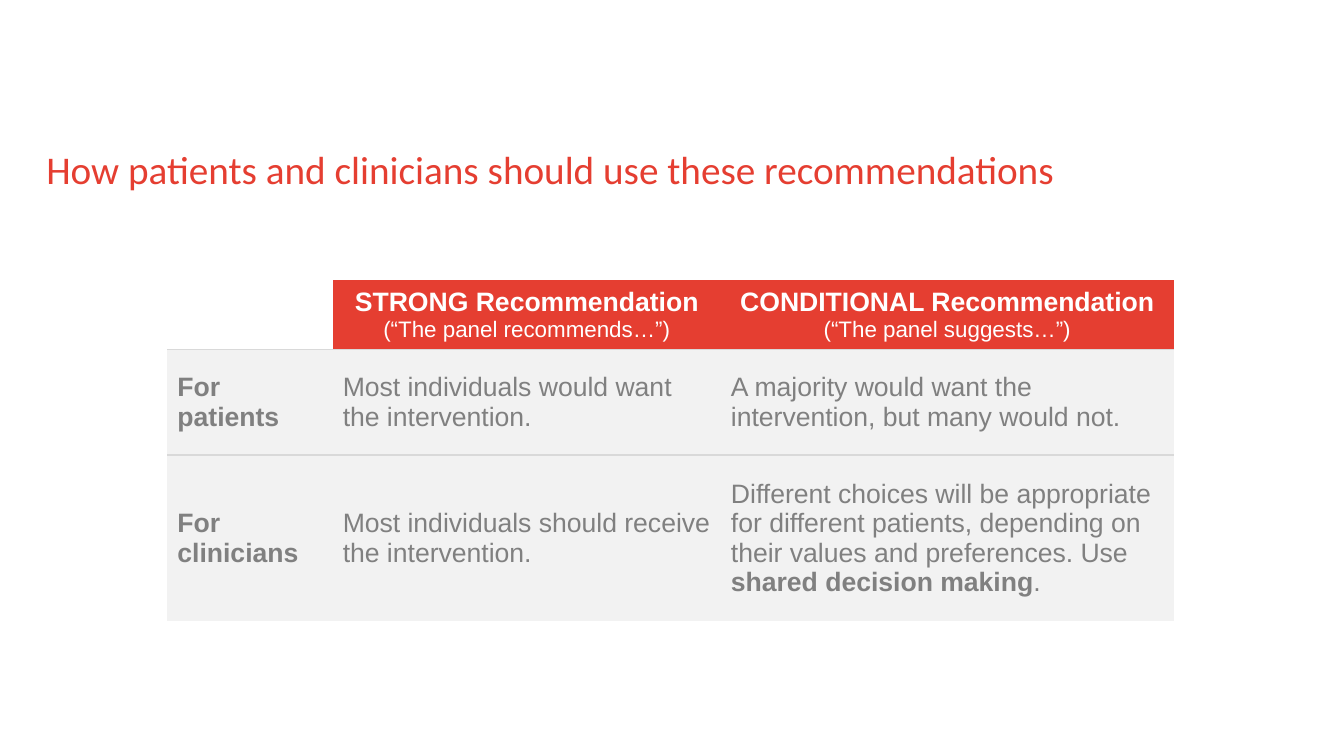
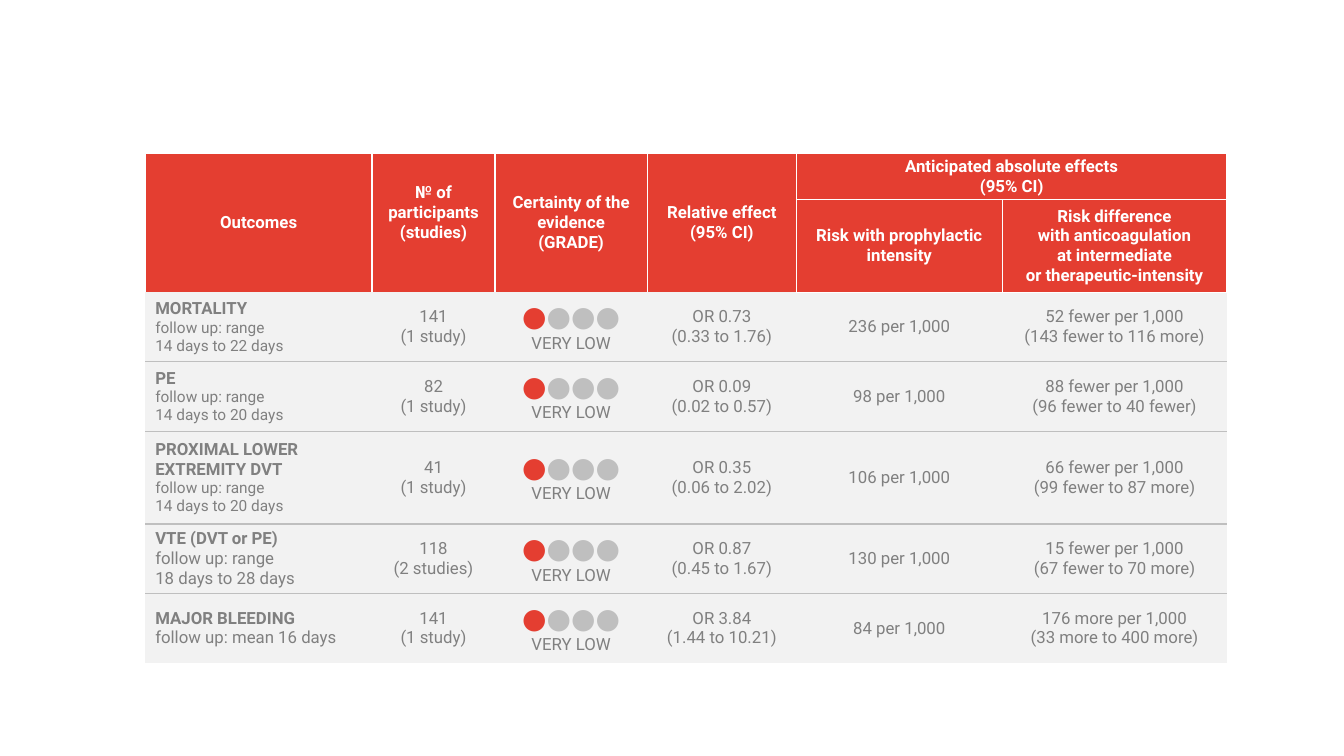
import lxml.etree
import pptx
import pptx.dml.color
import pptx.enum.text
import pptx.oxml.ns
import pptx.util

Inches = pptx.util.Inches
ALIGN = pptx.enum.text.PP_ALIGN
MIDDLE = pptx.enum.text.MSO_ANCHOR.MIDDLE

COLORS = {"red": "E53E31", "ruby": "E43E31", "white": "FFFFFF", "text": "808080",
          "pale": "F2F2F2", "rule": "D9D9D9", "dot": "BFBFBF"}
NO_GRID = "{2D5ABB26-0587-4C30-8999-92F81FD0307C}"

ADVICE = [
    ("For patients", "Most individuals would want the intervention.",
     [("A majority would want the intervention, but many would not.", False)]),
    ("For clinicians", "Most individuals should receive the intervention.",
     [("Different choices will be appropriate for different patients, "
       "depending on their values and preferences. Use ", False),
      ("shared decision making", True), (".", False)]),
]

HEADS = ["Outcomes", "№ of participants\n(studies)",
         "Certainty of the evidence\n(GRADE)", "Relative effect\n(95% CI)"]
EFFECTS = ["Risk with prophylactic intensity",
           "Risk difference\nwith anticoagulation\nat intermediate\nor therapeutic-intensity"]

# name, follow up, its size, participants, relative effect, risk, difference
RESULTS = [
    ("MORTALITY", "follow up: range\n14 days to 22 days", 11, "141\n(1 study)",
     "OR 0.73\n(0.33 to 1.76)", "236 per 1,000", "52 fewer per 1,000\n(143 fewer to 116 more)"),
    ("PE", "follow up: range\n14 days to 20 days", 11, "82\n(1 study)",
     "OR 0.09\n(0.02 to 0.57)", "98 per 1,000", "88 fewer per 1,000\n(96 fewer to 40 fewer)"),
    ("PROXIMAL LOWER EXTREMITY DVT", "follow up: range\n14 days to 20 days", 11, "41\n(1 study)",
     "OR 0.35\n(0.06 to 2.02)", "106 per 1,000", "66 fewer per 1,000\n(99 fewer to 87 more)"),
    ("VTE (DVT or PE)", "follow up: range\n18 days to 28 days", 12, "118\n(2 studies)",
     "OR 0.87\n(0.45 to 1.67)", "130 per 1,000", "15 fewer per 1,000\n(67 fewer to 70 more)"),
    ("MAJOR BLEEDING", "follow up: mean 16 days", 12, "141\n(1 study)",
     "OR 3.84\n(1.44 to 10.21)", "84 per 1,000", "176 more per 1,000\n(33 more to 400 more)"),
]


def rgb(name):
    return pptx.dml.color.RGBColor.from_string(COLORS[name])


def lines(text, size, color, bold=False):
    """Turn each line of text into a list with one styled part."""
    return [[(line, size, color, bold)] for line in text.split("\n")]


def write(frame, rows, font, align=ALIGN.LEFT):
    """Write each row of (text, size, color, bold) parts as a paragraph."""
    for i, parts in enumerate(rows):
        para = frame.paragraphs[0] if i == 0 else frame.add_paragraph()
        para.alignment = align
        for text, size, color, bold in parts:
            run = para.add_run()
            run.text = text
            run.font.name = font
            run.font.size = pptx.util.Pt(size)
            run.font.bold = bold
            run.font.color.rgb = rgb(color)


def add_title(slide, text):
    box = slide.shapes.add_textbox(Inches(0.46), Inches(1.47), Inches(12), Inches(0.46))
    frame = box.text_frame
    frame.word_wrap = True
    frame.vertical_anchor = MIDDLE
    frame.margin_left = frame.margin_right = frame.margin_top = frame.margin_bottom = 0
    write(frame, lines(text, 28, "red"), "Calibri")
    frame.paragraphs[0].line_spacing = 0.9


def add_grid(slide, left, top, widths, heights):
    """Add a table without style, sized by its columns and rows."""
    frame = slide.shapes.add_table(len(heights), len(widths), Inches(left), Inches(top),
                                   Inches(sum(widths)), Inches(sum(heights)))
    table = frame.table
    table.first_row = table.horz_banding = False
    table._tbl.tblPr.find(pptx.oxml.ns.qn("a:tableStyleId")).text = NO_GRID
    for col, width in zip(table.columns, widths):
        col.width = Inches(width)
    for row, height in zip(table.rows, heights):
        row.height = Inches(height)
    return table


def edge(cell, sides, color):
    """Draw 1 pt borders; sides come in the order L, R, T, B, before any fill."""
    qn = pptx.oxml.ns.qn
    props = cell._tc.get_or_add_tcPr()
    for side in sides:
        line = lxml.etree.SubElement(props, qn("a:ln" + side), w="12700")
        fill = lxml.etree.SubElement(line, qn("a:solidFill"))
        lxml.etree.SubElement(fill, qn("a:srgbClr"), val=COLORS[color])


def paint(cell, color):
    cell.fill.solid()
    cell.fill.fore_color.rgb = rgb(color)


def pad(cell, left=0, right=0, top=0, bottom=0):
    cell.margin_left, cell.margin_right = Inches(left), Inches(right)
    cell.margin_top, cell.margin_bottom = Inches(top), Inches(bottom)


def put(cell, rows, font, align=ALIGN.CENTER):
    cell.vertical_anchor = MIDDLE
    write(cell.text_frame, rows, font, align)


def add_advice(slide):
    table = add_grid(slide, 1.66, 2.78, [1.64, 3.85, 4.49], [0.68, 1.05, 1.65])
    for r in range(3):
        for c in range(3):
            cell = table.cell(r, c)
            if r < 2:
                edge(cell, "B", "rule")
            if r:
                paint(cell, "pale")
                pad(cell, 0.1, 0.08, 0.05, 0.05)
            elif c:
                paint(cell, "red")
            else:
                cell.fill.background()
    heads = [("STRONG", "recommends"), ("CONDITIONAL", "suggests")]
    for c, (kind, verb) in enumerate(heads, 1):
        put(table.cell(0, c), lines(f"{kind} Recommendation", 19, "white", True)
            + lines(f"(“The panel {verb}…”)", 16, "white"), "Arial")
    for r, (group, strong, weak) in enumerate(ADVICE, 1):
        texts = [lines(group, 19, "text", True), lines(strong, 19, "text"),
                 [[(text, 19, "text", bold) for text, bold in weak]]]
        for c, rows in enumerate(texts):
            put(table.cell(r, c), rows, "Arial", ALIGN.LEFT)


def fill_heads(table):
    for r in range(2):
        for c in range(6):
            cell = table.cell(r, c)
            edge(cell, "LRT", "white")
            paint(cell, "ruby")
            pad(cell)
    for c in range(4):
        table.cell(0, c).merge(table.cell(1, c))
    table.cell(0, 4).merge(table.cell(0, 5))
    pad(table.cell(0, 1), bottom=0.2)
    top = HEADS + ["Anticipated absolute effects\n(95% CI)"]
    spots = [(0, c, text) for c, text in enumerate(top)]
    spots += [(1, c, text) for c, text in enumerate(EFFECTS, 4)]
    for r, c, text in spots:
        put(table.cell(r, c), lines(text, 12, "white", True), "Roboto")


def add_results(slide):
    table = add_grid(slide, 1.44, 1.52, [2.25, 1.22, 1.51, 1.48, 2.04, 2.23],
                     [0.46, 0.92, 0.69, 0.69, 0.92, 0.69, 0.69])
    fill_heads(table)
    grade = [[("●", 20, "ruby", False), ("●●●", 20, "dot", False)],
             [("VERY LOW", 12, "text", False)]]
    for r, (name, follow, size, count, ratio, risk, change) in enumerate(RESULTS, 2):
        plain = [lines(text, 12, "text") for text in (count, ratio, risk, change)]
        outcome = lines(name, 12, "text", True) + lines(follow, size, "text")
        for c, rows in enumerate([outcome, plain[0], grade, *plain[1:]]):
            cell = table.cell(r, c)
            if r <= len(RESULTS):
                edge(cell, "B", "dot")
            paint(cell, "pale")
            pad(cell, left=0 if c else 0.1)
            put(cell, rows, "Roboto", ALIGN.CENTER if c else ALIGN.LEFT)


def main():
    deck = pptx.Presentation()
    deck.slide_width, deck.slide_height = Inches(13.33), Inches(7.5)
    blank = deck.slide_layouts[6]
    slide = deck.slides.add_slide(blank)
    add_title(slide, "How patients and clinicians should use these recommendations")
    add_advice(slide)
    add_results(deck.slides.add_slide(blank))
    deck.save("out.pptx")


if __name__ == "__main__":
    main()
